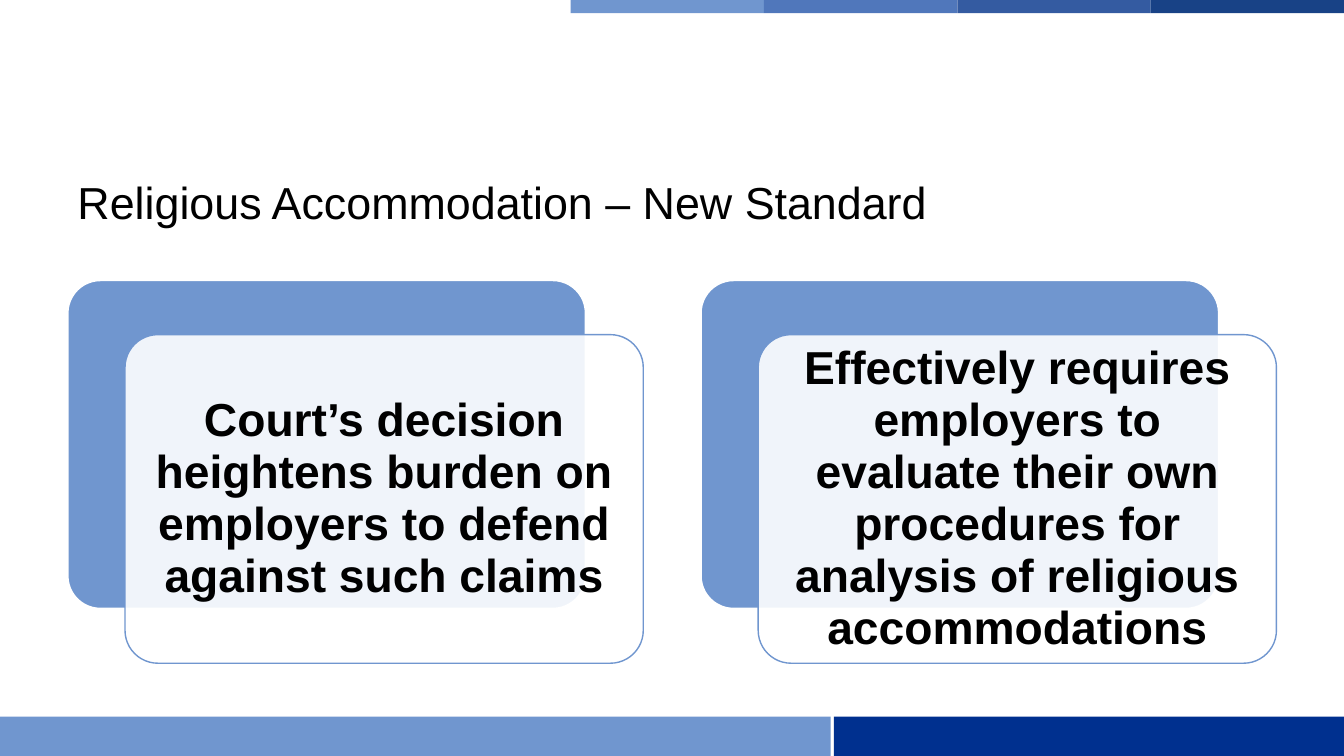
from pptx import Presentation
from pptx import util as u
from pptx.dml.color import RGBColor
from pptx.enum import shapes, text
from pptx.oxml.ns import qn
from lxml import etree

WIDTH, HEIGHT = 13.33, 7.5
FONT = "Arial"
LIGHT_BLUE, WHITE, BLACK = "7096CF", "FFFFFF", "000000"


def color(value):
    return RGBColor.from_string(value)


def add_block(page, kind, left, top, width, height, fill):
    block = page.shapes.add_shape(kind, *map(u.Inches, (left, top, width, height)))
    block.shadow.inherit = False
    block.fill.solid()
    block.fill.fore_color.rgb = color(fill)
    block.line.fill.background()
    return block


def add_text(page, left, top, width, height, words, size, inset=None):
    box = page.shapes.add_textbox(*map(u.Inches, (left, top, width, height)))
    frame = box.text_frame
    frame.word_wrap = True
    frame.vertical_anchor = text.MSO_ANCHOR.MIDDLE
    if inset is not None:
        frame.margin_left = frame.margin_right = u.Inches(inset)
        frame.margin_top = frame.margin_bottom = u.Inches(inset)
    para = frame.paragraphs[0]
    para.text = words
    para.font.name = FONT
    para.font.size = u.Pt(size)
    para.font.color.rgb = color(BLACK)
    return para


def add_top_band(page, left, top, width, height):
    fills = (LIGHT_BLUE, "5077BB", "345BA1", "184286")
    step = width / len(fills)
    for index, fill in enumerate(fills):
        add_block(page, shapes.MSO_SHAPE.RECTANGLE,
                  left + index * step, top, step, height, fill)


def add_footer_band(page, left, top, width, height):
    wide, gap = 8.24, 0.03
    add_block(page, shapes.MSO_SHAPE.RECTANGLE, left, top, wide, height, LIGHT_BLUE)
    add_block(page, shapes.MSO_SHAPE.RECTANGLE, left + wide + gap, top,
              width - wide - gap, height, "00308F")


def add_card(page, left, top, width, height, words):
    # Solid back panel and translucent front panel
    shift_x, shift_y = 0.57, 0.54
    panels = ((0, 0, LIGHT_BLUE, WHITE, 1.5), (shift_x, shift_y, WHITE, LIGHT_BLUE, 1))
    for dx, dy, fill, line, weight in panels:
        panel = add_block(page, shapes.MSO_SHAPE.ROUNDED_RECTANGLE,
                          left + dx, top + dy, width, height, fill)
        panel.adjustments[0] = 0.1
        panel.line.color.rgb = color(line)
        panel.line.width = u.Pt(weight)
    fill_color = panel._element.spPr.find(qn("a:solidFill"))[0]
    etree.SubElement(fill_color, qn("a:alpha"), val="90000")

    # Centred statement
    pad = 0.1
    para = add_text(page, left + shift_x + pad, top + shift_y + pad,
                    width - 2 * pad, height - 2 * pad, words, 33, inset=0.14)
    para.alignment = text.PP_ALIGN.CENTER
    para.line_spacing = 0.94
    para.font.bold = True


def main():
    deck = Presentation()
    deck.slide_width, deck.slide_height = u.Inches(WIDTH), u.Inches(HEIGHT)
    page = deck.slides.add_slide(deck.slide_layouts[6])

    # Decorative bands
    add_top_band(page, 5.66, 0, WIDTH - 5.66, 0.13)
    add_footer_band(page, 0, 7.11, WIDTH, 0.39)

    # Title
    add_text(page, 0.67, 1.5, 12, 1, "Religious Accommodation – New Standard", 32)

    # Statement cards
    statements = (
        "Court’s decision heightens burden on employers to defend against such claims",
        "Effectively requires employers to evaluate their own procedures "
        "for analysis of religious accommodations",
    )
    for index, words in enumerate(statements):
        add_card(page, 0.67 + index * 6.28, 2.78, 5.14, 3.26, words)

    deck.save("out.pptx")


if __name__ == "__main__":
    main()
